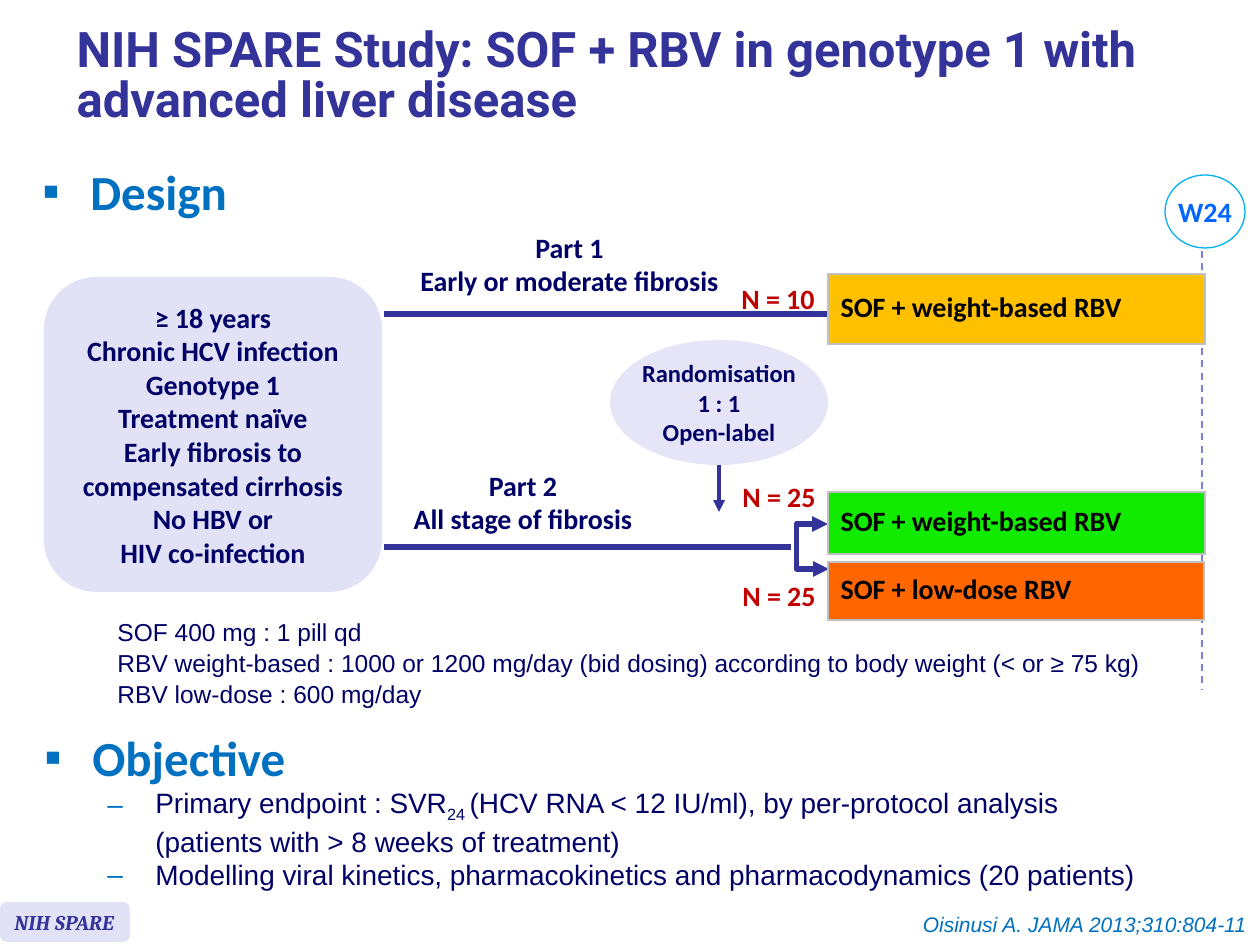
from lxml.etree import SubElement
from pptx import Presentation
from pptx.dml.color import RGBColor
from pptx.enum.dml import MSO_LINE
from pptx.enum.shapes import MSO_CONNECTOR as Link, MSO_SHAPE as Kind
from pptx.enum.text import MSO_ANCHOR as Anchor, MSO_AUTO_SIZE as Fit, PP_ALIGN as Align
from pptx.oxml.ns import qn
from pptx.util import Pt

SCALE = 914400 / 126
HUES = dict(navy="000066", blue="333399", sky="0070C0", red="C00000", black="000000",
            pale="E2E2F6", mist="E5E5F7", white="FFFFFF", ring="00B0F0", week="0066FF",
            dash="7E7ED4", edge="C0C0C0", gold="FFC000", green="10EB00", orange="FF6600")

# Text styles: size, font, colour, bold, italic
STYLES = dict(
    title=(28, "Roboto", "blue", True, False),
    head=(28, "Calibri", "sky", True, False),
    label=(16, "Calibri", "navy", True, False),
    count=(16, "Calibri", "red", True, False),
    arm=(16, "Calibri", "black", True, False),
    week=(16, "Calibri", "week", True, False),
    draw=(14, "Calibri", "navy", True, False),
    dose=(14, "Arial", "navy", False, False),
    point=(16, "Arial", "navy", False, False),
    tag=(12, "Cambria", "blue", True, True),
    cite=(12, "Arial", "sky", False, True),
)

# Content; places are left, top, width, height in px
TITLE = "NIH SPARE Study: SOF + RBV in genotype 1 with advanced liver disease"
WHO = ["≥ 18 years", "Chronic HCV infection", "Genotype 1", "Treatment naïve",
       "Early fibrosis to compensated cirrhosis", "No HBV or", "HIV co-infection"]
DOSES = ["SOF 400 mg : 1 pill qd",
         "RBV weight-based : 1000 or 1200 mg/day (bid dosing) according to body weight (< or ≥ 75 kg)",
         "RBV low-dose : 600 mg/day"]
GOALS = [
    ["Primary endpoint : SVR", ("24 ", "sub"),
     "(HCV RNA < 12 IU/ml), by per-protocol analysis", "\n", "(patients with > 8 weeks of treatment)"],
    ["Modelling viral kinetics, pharmacokinetics and pharmacodynamics (20 patients)"],
]
LINES = [  # from, to, colour, width, dashed, arrow
    ((384, 314), (827, 314), "blue", 3, False, False),
    ((384, 547), (791, 547), "blue", 3, False, False),
    ((1202, 239), (1202, 690), "dash", 1, True, False),
    ((719, 462), (719, 512), "blue", 2.25, False, True),
]
SHAPES = [  # kind, place, fill, outline, style, align, wrap, inset, lines
    (Kind.OVAL, (1165, 175, 80, 73), "white", "ring", "week", Align.CENTER, False, None, ["W24"]),
    (Kind.ROUNDED_RECTANGLE, (44, 277, 338, 315), "pale", None, "label", Align.CENTER, True, None, WHO),
    (Kind.OVAL, (610, 340, 218, 125), "mist", None, "draw", Align.CENTER, False, 0,
     ["Randomisation", "1 : 1", "Open-label"]),
    (Kind.ROUNDED_RECTANGLE, (0, 902, 130, 40), "pale", None, "tag", Align.LEFT, False, None, ["NIH SPARE"]),
]
ARMS = [
    ((828, 274, 377, 70), "gold", "SOF + weight-based RBV"),
    ((828, 492, 377, 62), "green", "SOF + weight-based RBV"),
    ((828, 562, 376, 58), "orange", "SOF + low-dose RBV"),
]
NOTES = [  # place, style, align, lines
    ((728, 275, 100, 47), "count", Align.CENTER, ["N = 10"]),
    ((729, 473, 100, 47), "count", Align.CENTER, ["N = 25"]),
    ((729, 572, 100, 47), "count", Align.CENTER, ["N = 25"]),
    ((406, 224, 327, 81), "label", Align.CENTER, ["Part 1", "Early or moderate fibrosis"]),
    ((400, 462, 246, 81), "label", Align.CENTER, ["Part 2", "All stage of fibrosis"]),
    ((896, 905, 363, 38), "cite", Align.RIGHT, ["Oisinusi A. JAMA 2013;310:804-11"]),
]


def px(n):
    return round(n * SCALE)


def box(place):
    return [px(n) for n in place]


def rgb(name):
    return RGBColor.from_string(HUES[name])


def write(par, runs, style, align=Align.LEFT):
    size, font, hue, bold, slant = STYLES[style]
    par.alignment = align
    for item in runs:
        if item == "\n":
            par.add_line_break()
            continue
        sub = isinstance(item, tuple)
        run = par.add_run()
        run.text = item[0] if sub else item
        face = run.font
        face.size, face.name, face.bold, face.italic = Pt(size), font, bold, slant
        face.color.rgb = rgb(hue)
        if sub:
            face._element.set("baseline", "-25000")


def paras(frame, count):
    return [frame.paragraphs[0]] + [frame.add_paragraph() for _ in range(count - 1)]


def fill_text(frame, lines, style, align=Align.LEFT):
    for par, line in zip(paras(frame, len(lines)), lines):
        write(par, [line], style, align)


def indent(par, left, hang, mark=None):
    ppr = par._p.get_or_add_pPr()
    ppr.set("marL", str(px(left)))
    ppr.set("indent", str(-px(hang)))
    if mark:
        tint = SubElement(ppr, qn("a:buClr"))
        SubElement(tint, qn("a:srgbClr"), val=HUES["sky"])
        SubElement(ppr, qn("a:buFont"), typeface="Arial")
        SubElement(ppr, qn("a:buChar"), char=mark)


def text_box(place, wrap=True):
    frame = slide.shapes.add_textbox(*box(place)).text_frame
    frame.word_wrap = wrap
    return frame


def link(kind, start, end, hue, width, ends=()):
    line = slide.shapes.add_connector(kind, *box(start), *box(end))
    line.line.color.rgb = rgb(hue)
    line.line.width = Pt(width)
    for end in ends:
        SubElement(line.line._get_or_add_ln(), qn("a:" + end), type="triangle")
    SubElement(line._element.spPr, qn("a:effectLst"))
    return line


deck = Presentation()
deck.slide_width, deck.slide_height = px(1260), px(945)
slide = deck.slides.add_slide(deck.slide_layouts[5])

# Title
head = slide.shapes.title
head.left, head.top, head.width, head.height = box((64, 10, 1150, 135))
head.text_frame.auto_size = Fit.NONE
head.text_frame.vertical_anchor = Anchor.MIDDLE
fill_text(head.text_frame, [TITLE], "title")
head.text_frame.paragraphs[0].line_spacing = 0.85

# Straight lines
for start, end, hue, width, dashed, arrow in LINES:
    line = link(Link.STRAIGHT, start, end, hue, width, ["tailEnd"] if arrow else [])
    if dashed:
        line.line.dash_style = MSO_LINE.DASH

# Fork to the two arms of part 2, bending 32 px left of its ends
fork = link(Link.ELBOW, (828, 524), (829, 569), "blue", 3, ["headEnd", "tailEnd"])
bends = fork._element.spPr.find(qn("a:prstGeom")).get_or_add_avLst()
SubElement(bends, qn("a:gd"), name="adj1", fmla="val -3200000")

# Filled shapes
for kind, place, fill, edge, style, align, wrap, inset, lines in SHAPES:
    shape = slide.shapes.add_shape(kind, *box(place))
    shape.shadow.inherit = False
    shape.fill.solid()
    shape.fill.fore_color.rgb = rgb(fill)
    if edge:
        shape.line.color.rgb = rgb(edge)
        shape.line.width = Pt(0.75)
    else:
        shape.line.fill.background()
    frame = shape.text_frame
    frame.word_wrap, frame.vertical_anchor = wrap, Anchor.MIDDLE
    if inset is not None:
        frame.margin_left = frame.margin_right = frame.margin_top = frame.margin_bottom = inset
    fill_text(frame, lines, style, align)

# Treatment arms
for place, fill, name in ARMS:
    table = slide.shapes.add_table(1, 1, *box(place)).table
    table.first_row = table.horz_banding = False
    cell = table.cell(0, 0)
    cell.vertical_anchor = Anchor.MIDDLE
    fill_text(cell.text_frame, [name], "arm")
    cell.text_frame.paragraphs[0].line_spacing = 0.8
    tcpr = cell._tc.get_or_add_tcPr()
    for side in ("lnL", "lnR", "lnT", "lnB"):
        edge = SubElement(tcpr, qn("a:" + side), w=str(Pt(1)))
        SubElement(SubElement(edge, qn("a:solidFill")), qn("a:srgbClr"), val=HUES["edge"])
    cell.fill.solid()
    cell.fill.fore_color.rgb = rgb(fill)

# Labels and citation
for place, style, align, lines in NOTES:
    fill_text(text_box(place, False), lines, style, align)

# Doses
frame = text_box((105, 611, 1091, 105))
fill_text(frame, DOSES, "dose")
for i, par in enumerate(frame.paragraphs):
    indent(par, 48, 48)
    if i:
        par.space_before = Pt(0.7)

# Design and objective
for place, name, goals in [((30, 155, 250, 79), "Design", []),
                           ((32, 721, 1237, 151), "Objective", GOALS)]:
    first, *rest = paras(text_box(place), 1 + len(goals))
    indent(first, 48, 48, "▪")
    write(first, [name], "head")
    for par, runs in zip(rest, goals):
        par.level = 1
        indent(par, 111, 48, "–")
        write(par, runs, "point")

deck.save("out.pptx")
